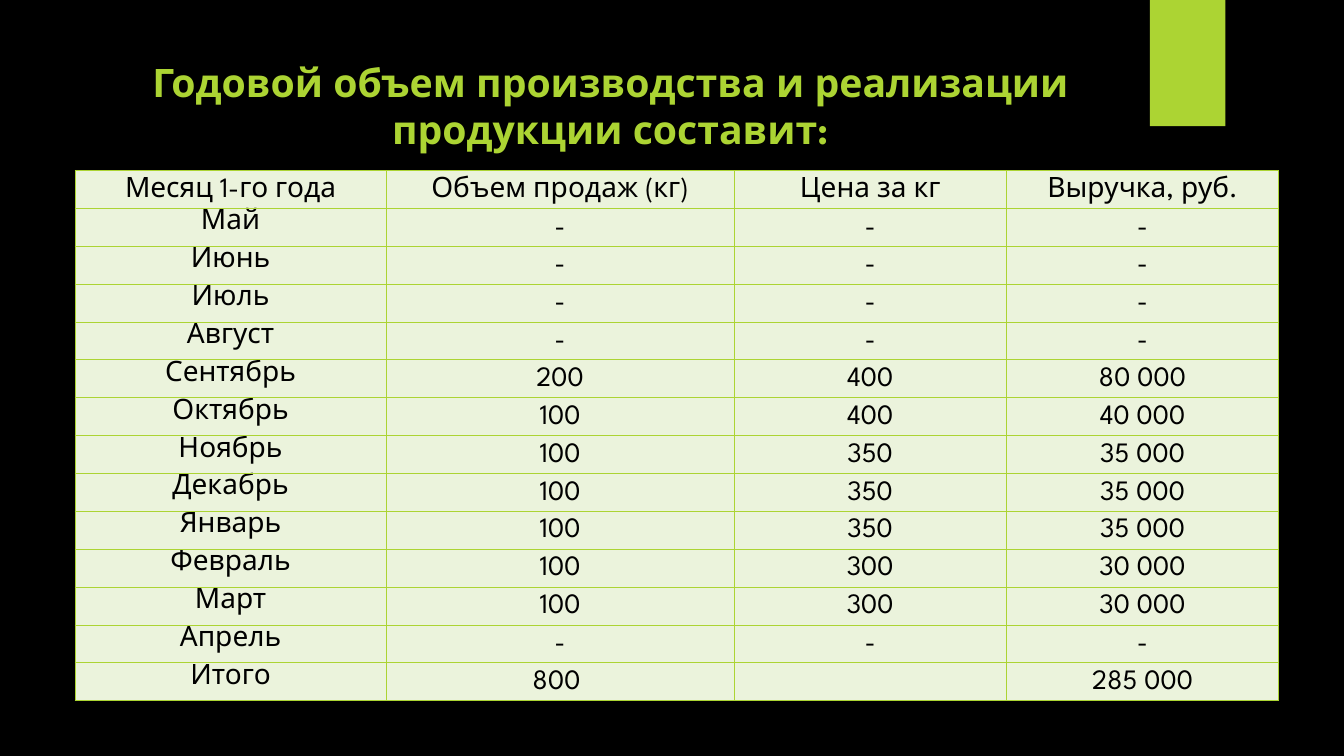
from lxml.etree import SubElement
from pptx import Presentation
from pptx.dml.color import RGBColor
from pptx.enum.shapes import MSO_SHAPE as Shape
from pptx.enum.text import MSO_ANCHOR as Anchor, PP_ALIGN as Align
from pptx.oxml.ns import qn
from pptx.util import Cm, Pt

COLORS = {"background": "000000", "accent": "ACD433", "cell": "EBF3DC", "text": "000000"}
FONT = "League Spartan"
TITLE = "Годовой объем производства и реализации продукции составит:"
SALES = [
    ("Месяц 1-го года", "Объем продаж (кг)", "Цена за кг", "Выручка, руб."),
    ("Май", "-", "-", "-"),
    ("Июнь", "-", "-", "-"),
    ("Июль", "-", "-", "-"),
    ("Август", "-", "-", "-"),
    ("Сентябрь", "200", "400", "80 000"),
    ("Октябрь", "100", "400", "40 000"),
    ("Ноябрь", "100", "350", "35 000"),
    ("Декабрь", "100", "350", "35 000"),
    ("Январь", "100", "350", "35 000"),
    ("Февраль", "100", "300", "30 000"),
    ("Март", "100", "300", "30 000"),
    ("Апрель", "-", "-", "-"),
    ("Итого", "800 ", "", "285 000"),
]
COLUMN_WIDTHS = [Cm(7.84), Cm(8.77), Cm(6.86), Cm(6.87)]
TABLE_HEIGHT = Cm(13.36)


def color(name):
    return RGBColor.from_string(COLORS[name])


def format_para(para, size, color_name, bold=False):
    para.alignment = Align.CENTER
    para.font.name = FONT
    para.font.size = Pt(size)
    para.font.bold = bold
    para.font.color.rgb = color(color_name)


def add_borders(cell):
    properties = cell._tc.get_or_add_tcPr()
    for side in ("a:lnL", "a:lnR", "a:lnT", "a:lnB"):
        line = SubElement(properties, qn(side), w=str(Pt(0.75)))
        fill = SubElement(line, qn("a:solidFill"))
        SubElement(fill, qn("a:srgbClr"), val=COLORS["accent"])


def fill_cell(cell, text, anchor):
    add_borders(cell)
    cell.fill.solid()
    cell.fill.fore_color.rgb = color("cell")
    cell.margin_left = cell.margin_right = Cm(0.18)
    cell.margin_top = cell.margin_bottom = 0
    cell.vertical_anchor = anchor
    cell.text = text
    para = cell.text_frame.paragraphs[0]
    para.line_spacing = 1.07
    format_para(para, 20, "text")


def add_title(page):
    title = page.shapes.title
    title.left, title.top, title.width, title.height = Cm(1.7), Cm(1.27), Cm(27.36), Cm(2.77)
    frame = title.text_frame
    frame.word_wrap = True
    frame.vertical_anchor = Anchor.MIDDLE
    frame.text = TITLE
    format_para(frame.paragraphs[0], 28, "accent", bold=True)


def add_accent_tab(page):
    tab = page.shapes.add_shape(Shape.RECTANGLE, Cm(28.98), 0, Cm(1.9), Cm(3.18))
    tab.shadow.inherit = False
    tab.fill.solid()
    tab.fill.fore_color.rgb = color("accent")
    tab.line.fill.background()


def add_sales_table(page):
    table = page.shapes.add_table(
        len(SALES), len(COLUMN_WIDTHS), Cm(1.89), Cm(4.3), sum(COLUMN_WIDTHS), TABLE_HEIGHT
    ).table
    table.horz_banding = False
    table.first_row = False
    for column, width in zip(table.columns, COLUMN_WIDTHS):
        column.width = width
    for row_index, values in enumerate(SALES):
        for column_index, text in enumerate(values):
            is_row_label = row_index > 0 and column_index == 0
            anchor = Anchor.TOP if is_row_label else Anchor.MIDDLE
            fill_cell(table.cell(row_index, column_index), text, anchor)


def main():
    deck = Presentation()
    deck.slide_width, deck.slide_height = Cm(33.87), Cm(19.05)
    page = deck.slides.add_slide(deck.slide_layouts[5])
    page.background.fill.solid()
    page.background.fill.fore_color.rgb = color("background")
    add_accent_tab(page)
    add_title(page)
    add_sales_table(page)
    deck.save("out.pptx")


if __name__ == "__main__":
    main()
